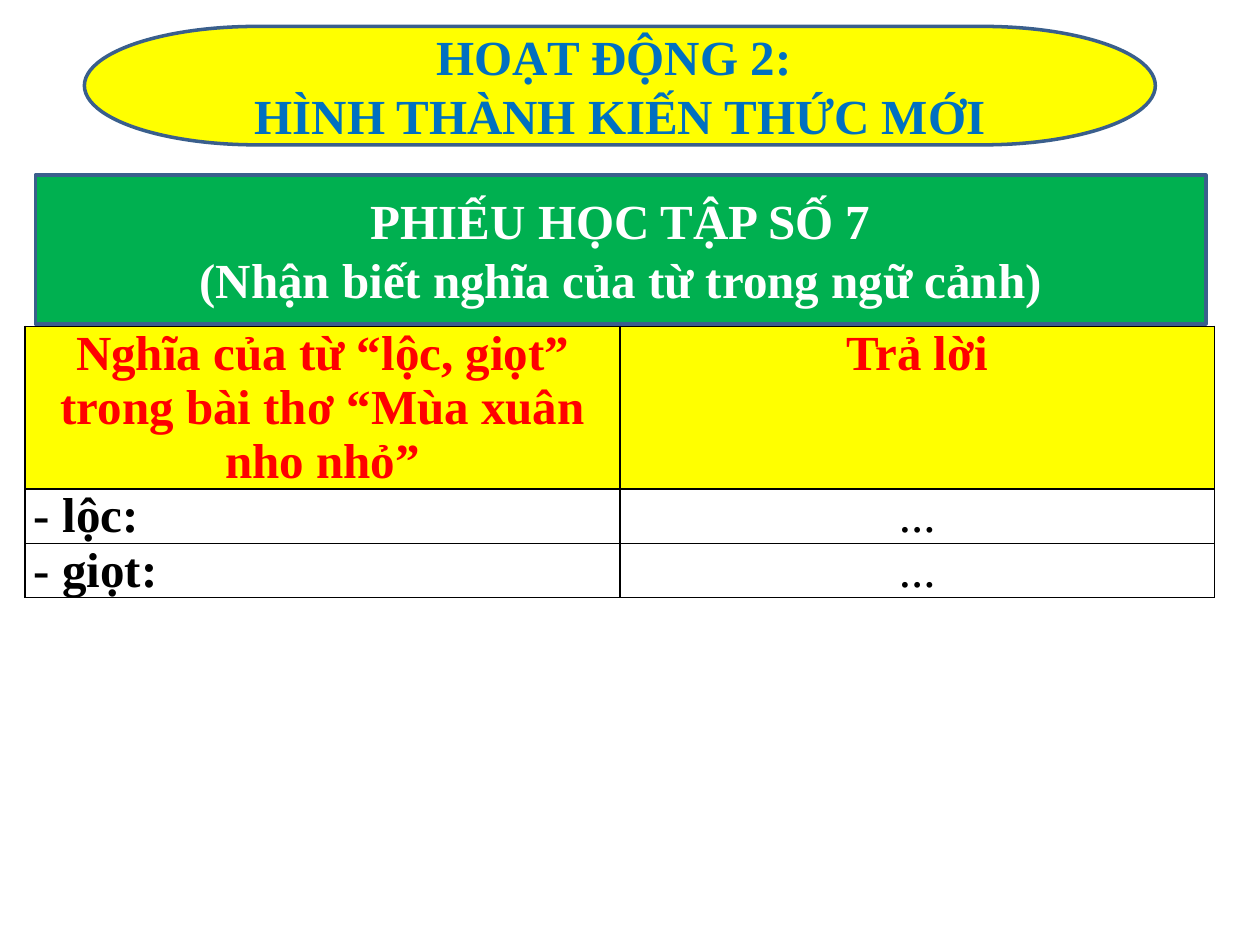
from dataclasses import dataclass

from lxml import etree
from pptx import Presentation
from pptx.dml.color import RGBColor
from pptx.enum.shapes import MSO_SHAPE
from pptx.enum.text import MSO_ANCHOR, PP_ALIGN
from pptx.oxml.ns import qn
from pptx.util import Inches, Pt

TERMINATOR, RECTANGLE = MSO_SHAPE.FLOWCHART_TERMINATOR, MSO_SHAPE.RECTANGLE
LEFT, CENTER = PP_ALIGN.LEFT, PP_ALIGN.CENTER
MIDDLE = MSO_ANCHOR.MIDDLE


@dataclass(frozen=True)
class Theme:
    font: str = "Times New Roman"
    size: float = 28
    outline_width: float = 2
    border_width: float = 1
    yellow: str = "FFFF00"
    green: str = "00B050"
    blue: str = "0070C0"
    red: str = "FF0000"
    white: str = "FFFFFF"
    black: str = "000000"
    outline: str = "3A5F8C"


class SlideBuilder:
    def __init__(self, slide, theme):
        self.slide = slide
        self.theme = theme

    def add_lines(self, frame, lines, color, align=CENTER, bold=True):
        frame.word_wrap = True
        font_format = {"name": self.theme.font, "size": Pt(self.theme.size), "bold": bold}
        for index, line in enumerate(lines):
            paragraph = frame.add_paragraph() if index else frame.paragraphs[0]
            paragraph.alignment = align
            run = paragraph.add_run()
            run.text = line
            for key, value in font_format.items():
                setattr(run.font, key, value)
            run.font.color.rgb = RGBColor.from_string(color)

    def banner(self, kind, box, lines, fill, color):
        shape = self.slide.shapes.add_shape(kind, *map(Inches, box))
        shape.shadow.inherit = False
        shape.fill.solid()
        shape.fill.fore_color.rgb = RGBColor.from_string(fill)
        shape.line.color.rgb = RGBColor.from_string(self.theme.outline)
        shape.line.width = Pt(self.theme.outline_width)
        shape.text_frame.vertical_anchor = MIDDLE
        self.add_lines(shape.text_frame, lines, color)

    def border(self, cell):
        properties = cell._tc.get_or_add_tcPr()
        for position, side in enumerate(("lnL", "lnR", "lnT", "lnB")):
            line = etree.Element(qn(f"a:{side}"), w=str(Pt(self.theme.border_width)))
            fill = etree.SubElement(line, qn("a:solidFill"))
            etree.SubElement(fill, qn("a:srgbClr"), val=self.theme.black)
            properties.insert(position, line)

    def cell(self, cell, text, fill, **text_format):
        margins = {"margin_left": 0.07, "margin_right": 0.07,
                   "margin_top": 0, "margin_bottom": 0}
        for key, value in margins.items():
            setattr(cell, key, Inches(value))
        cell.fill.solid()
        cell.fill.fore_color.rgb = RGBColor.from_string(fill)
        self.border(cell)
        self.add_lines(cell.text_frame, [text], **text_format)

    def worksheet(self, left, top, column_width, row_heights, header, answers):
        theme = self.theme
        table = self.slide.shapes.add_table(
            len(row_heights), len(header), Inches(left), Inches(top),
            Inches(column_width * len(header)), Inches(sum(row_heights))).table
        for column in table.columns:
            column.width = Inches(column_width)
        for row, height in zip(table.rows, row_heights):
            row.height = Inches(height)
        for column, title in enumerate(header):
            self.cell(table.cell(0, column), title, theme.yellow, color=theme.red)
        for row, (word, answer) in enumerate(answers, 1):
            self.cell(table.cell(row, 0), word, theme.white,
                      color=theme.black, align=LEFT)
            self.cell(table.cell(row, 1), answer, theme.white,
                      color=theme.black, bold=False)


def main():
    presentation = Presentation()
    presentation.slide_width, presentation.slide_height = Inches(10), Inches(7.5)
    theme = Theme()
    builder = SlideBuilder(
        presentation.slides.add_slide(presentation.slide_layouts[6]), theme)

    # Activity title
    builder.banner(TERMINATOR, (0.67, 0.21, 8.5, 0.94),
                   ["HOẠT ĐỘNG 2: ", "HÌNH THÀNH KIẾN THỨC MỚI"],
                   theme.yellow, theme.blue)

    # Worksheet heading
    builder.banner(RECTANGLE, (0.28, 1.39, 9.29, 1.18),
                   ["PHIẾU HỌC TẬP SỐ 7", "(Nhận biết nghĩa của từ trong ngữ cảnh)"],
                   theme.green, theme.white)

    # Worksheet table
    builder.worksheet(
        0.2, 2.59, 4.72, (1.29, 0.43, 0.43),
        ["Nghĩa của từ “lộc, giọt” trong bài thơ “Mùa xuân nho nhỏ”", "Trả lời"],
        [("- lộc:", "..."), ("- giọt:", "...")])

    presentation.save("out.pptx")


if __name__ == "__main__":
    main()
